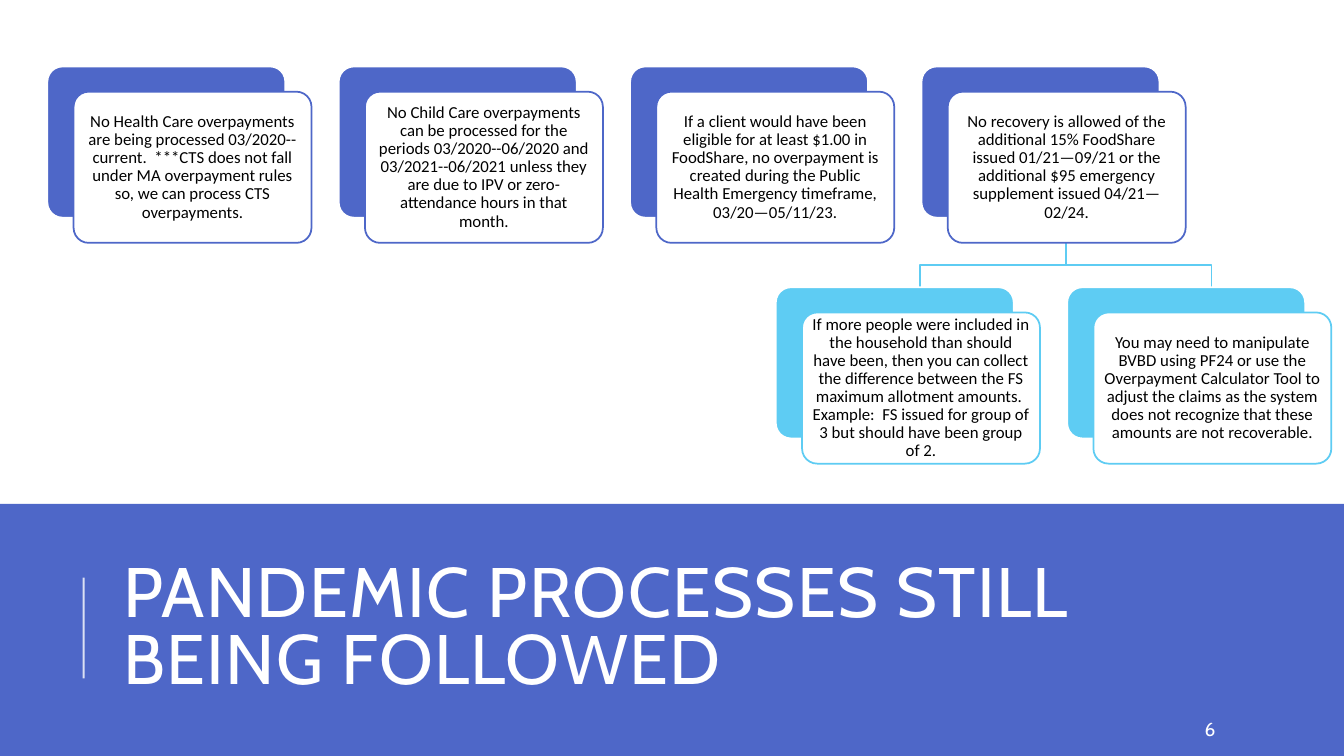
"""Build the slide on pandemic overpayment processes still being followed."""
from dataclasses import dataclass

from lxml import etree
from pptx import Presentation
from pptx import util as u
from pptx.dml.color import RGBColor
from pptx.enum import shapes, text
from pptx.oxml import ns


@dataclass(frozen=True)
class Theme:
    blue: str = "4E67C8"
    sky: str = "5ECCF3"
    white: str = "FFFFFF"
    black: str = "000000"
    heading_font: str = "Cabin"
    body_font: str = "Calibri"
    title_size: float = 50
    body_size: float = 12
    number_size: float = 13.6
    outline: float = 1.25


def paint(shape, fill, line):
    """Give a shape its fill and outline, with None for neither."""
    shape.shadow.inherit = False
    for part, color in ((shape.fill, fill), (shape.line.fill, line)):
        if color:
            part.solid()
            part.fore_color.rgb = RGBColor.from_string(color)
        else:
            part.background()
    shape.line.width = u.Pt(theme.outline)


def write(shape, words, font, size, color, align, spacing, inset=0.1):
    """Put one formatted paragraph in a shape and return its run."""
    frame = shape.text_frame
    frame_format = {
        "word_wrap": True,
        "auto_size": text.MSO_AUTO_SIZE.NONE,
        "vertical_anchor": text.MSO_ANCHOR.MIDDLE,
        "margin_left": u.Inches(inset),
        "margin_right": u.Inches(inset),
        "margin_top": u.Inches(0.05),
        "margin_bottom": u.Inches(0.05),
    }
    for name, value in frame_format.items():
        setattr(frame, name, value)
    paragraph = frame.paragraphs[0]
    paragraph.alignment = align
    paragraph.line_spacing = spacing
    run = paragraph.add_run()
    run.text = words
    for name, value in {"name": font, "size": u.Pt(size)}.items():
        setattr(run.font, name, value)
    run.font.color.rgb = RGBColor.from_string(color)
    return run


theme = Theme()
LEFT, CENTER = text.PP_ALIGN.LEFT, text.PP_ALIGN.CENTER

presentation = Presentation()
presentation.slide_width = u.Inches(13.33)
presentation.slide_height = u.Inches(7.5)
slide = presentation.slides.add_slide(presentation.slide_layouts[5])

band = slide.shapes.add_shape(
    shapes.MSO_SHAPE.RECTANGLE, 0, u.Inches(5), presentation.slide_width, u.Inches(2.5))
paint(band, theme.blue, None)

title = slide.shapes.title
title_box = {"left": 1.12, "top": 5.44, "width": 10.63, "height": 1.64}
for name, value in title_box.items():
    setattr(title, name, u.Inches(value))
title_run = write(title, "PANDEMIC PROCESSES STILL BEING FOLLOWED", theme.heading_font,
                  theme.title_size, theme.white, LEFT, 0.8)
title_run.font._element.set("spc", "100")
band._element.addnext(title._element)

rule = slide.shapes.add_connector(
    shapes.MSO_CONNECTOR.STRAIGHT, u.Inches(0.83), u.Inches(6.73), u.Inches(0.83), u.Inches(5.73))
rule.line.width = u.Pt(1.5)
rule.line.color.rgb = RGBColor.from_string(theme.white)
rule_color = rule._element.spPr.find(".//" + ns.qn("a:srgbClr"))
etree.SubElement(rule_color, ns.qn("a:alpha"), val="80000")
etree.SubElement(rule._element.spPr, ns.qn("a:effectLst"))

number = slide.shapes.add_textbox(u.Inches(11.85), u.Inches(7.08), u.Inches(1.06), u.Inches(0.3))
write(number, "6", theme.heading_font, theme.number_size, theme.white, LEFT, 1.0)

first_left, step = 0.47, 2.89
card_width, card_height = 2.36, 1.5
offset_x, offset_y = 0.26, 0.25
parent_top, child_top = 0.66, 2.85

trunk_x = first_left + 3 * step + offset_x / 2 + card_width / 2 + offset_x / 2 - 0.01
trunk_top, branch_y = parent_top + card_height, 2.63
for side in (1, -1):
    branch_x = trunk_x + side * step / 2
    builder = slide.shapes.build_freeform(u.Inches(trunk_x), u.Inches(trunk_top))
    corners = [(trunk_x, branch_y), (branch_x, branch_y), (branch_x, child_top)]
    builder.add_line_segments([(u.Inches(x), u.Inches(y)) for x, y in corners], close=False)
    paint(builder.convert_to_shape(), None, theme.sky)

cards = [
    (0, parent_top, theme.blue,
     "No Health Care overpayments are being processed 03/2020--current.  ***CTS does not fall "
     "under MA overpayment rules so, we can process CTS overpayments."),
    (1, parent_top, theme.blue,
     "No Child Care overpayments can be processed for the periods 03/2020--06/2020 and "
     "03/2021--06/2021 unless they are due to IPV or zero-attendance hours in that month."),
    (2, parent_top, theme.blue,
     "If a client would have been eligible for at least $1.00 in FoodShare, no overpayment is "
     "created during the Public Health Emergency timeframe, 03/20—05/11/23."),
    (3, parent_top, theme.blue,
     "No recovery is allowed of the additional 15% FoodShare issued 01/21—09/21 or the "
     "additional $95 emergency supplement issued 04/21—02/24."),
    (2.5, child_top, theme.sky,
     "If more people were included in the household than should have been, then you can collect "
     "the difference between the FS maximum allotment amounts.  Example:  FS issued for group "
     "of 3 but should have been group of 2."),
    (3.5, child_top, theme.sky,
     "You may need to manipulate BVBD using PF24 or use the Overpayment Calculator Tool to "
     "adjust the claims as the system does not recognize that these amounts are not recoverable."),
]
for column, top, color, words in cards:
    left = first_left + column * step
    layers = [(0, 0, color, theme.white), (offset_x, offset_y, theme.white, color)]
    for shift_x, shift_y, fill, line in layers:
        card = slide.shapes.add_shape(
            shapes.MSO_SHAPE.ROUNDED_RECTANGLE, u.Inches(left + shift_x),
            u.Inches(top + shift_y), u.Inches(card_width), u.Inches(card_height))
        card.adjustments[0] = 0.1
        paint(card, fill, line)
    write(card, words, theme.body_font, theme.body_size, theme.black, CENTER, 0.9, inset=0.05)

presentation.save("out.pptx")
